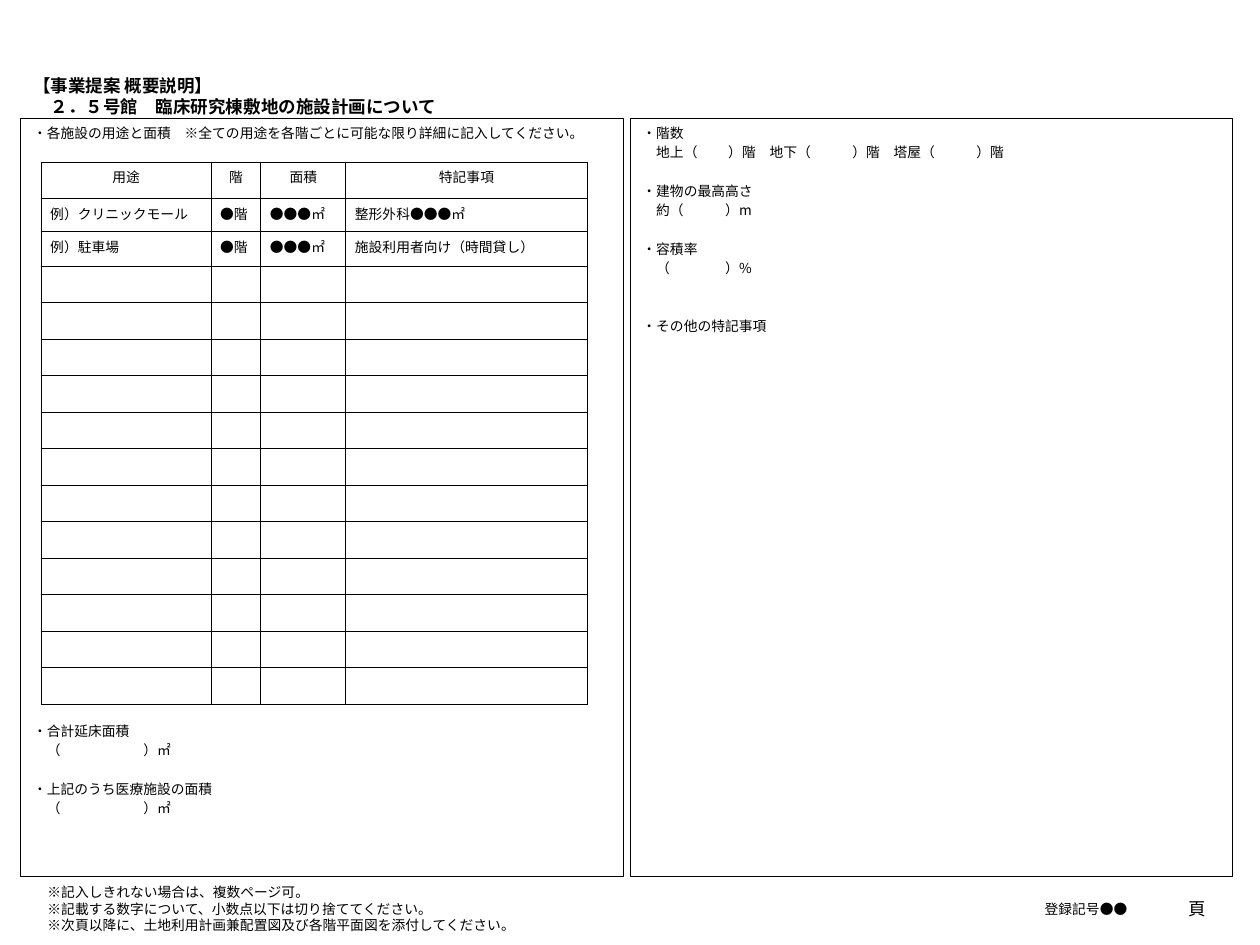
from lxml import etree
from pptx import Presentation
from pptx.dml.color import RGBColor
from pptx.enum import shapes, text
from pptx.oxml import ns
from pptx.util import Pt

COLORS = {"ink": "000000", "paper": "FFFFFF"}
FONT = "Noto Sans CJK JP"
LEFT, CENTER, RIGHT = text.PP_ALIGN.LEFT, text.PP_ALIGN.CENTER, text.PP_ALIGN.RIGHT
TOP, MIDDLE = text.MSO_ANCHOR.TOP, text.MSO_ANCHOR.MIDDLE
LINE, GAP = 13.3, 2.2
BLANK = LINE + GAP

USES = [
    ("用途", "階", "面積", "特記事項"),
    ("例）クリニックモール", "●階", "●●●㎡", "整形外科●●●㎡"),
    ("例）駐車場", "●階", "●●●㎡", "施設利用者向け（時間貸し）"),
] + [("",) * 4] * 12
COLUMNS = [136, 39.8, 68, 193]
ROWS = [29, 26.4, 28] + [29.2] * 12

AREAS = [
    ("・各施設の用途と面積　※全ての用途を各階ごとに可能な限り詳細に記入してください。", 0),
    ("・合計延床面積", GAP + 30 * BLANK - 2),
    ("　（　　　　　　）㎡", GAP),
    ("・上記のうち医療施設の面積", GAP + BLANK),
    ("　（　　　　　　）㎡", GAP),
]
BUILDING = [
    ("・階数", 0),
    ("　地上（　 　）階　地下（　　　）階　塔屋（　　　）階", GAP),
    ("・建物の最高高さ", GAP + BLANK),
    ("　約（　　　）m", GAP),
    ("・容積率", GAP + BLANK),
    ("　（　　　　）%", GAP),
    ("・その他の特記事項", GAP + 2 * BLANK),
]
NOTES = [
    "※記入しきれない場合は、複数ページ可。",
    "※記載する数字について、小数点以下は切り捨ててください。",
    "※次頁以降に、土地利用計画兼配置図及び各階平面図を添付してください。",
]


def write(p, words, size=11, bold=False, align=LEFT, before=0, line=None):
    p.alignment = align
    p.space_before = Pt(before)
    if line:
        p.line_spacing = Pt(line)
    for i, part in enumerate(words.split("\n")):
        if i:
            p.add_line_break()
        r = p.add_run()
        r.text = part
        r.font.name, r.font.size, r.font.bold = FONT, Pt(size), bold
        r.font.color.rgb = RGBColor.from_string(COLORS["ink"])
        ea = etree.SubElement(r.font._element, ns.qn("a:ea"))
        ea.set("typeface", FONT)


def frame(s, anchor=TOP):
    tf = s.text_frame
    tf.word_wrap = True
    tf.auto_size = text.MSO_AUTO_SIZE.NONE
    tf.vertical_anchor = anchor
    tf.margin_left = tf.margin_right = Pt(10)
    tf.margin_top = tf.margin_bottom = Pt(5)
    return tf


def paragraphs(tf, lines, **fmt):
    for i, (words, before) in enumerate(lines):
        p = tf.add_paragraph() if i else tf.paragraphs[0]
        write(p, words, before=before, **fmt)


def heading(slide, x, y, w, h):
    s = slide.shapes.title
    s.left, s.top, s.width, s.height = Pt(x), Pt(y), Pt(w), Pt(h)
    words = "【事業提案 概要説明】\n　２．５号館　臨床研究棟敷地の施設計画について"
    write(frame(s).paragraphs[0], words, size=14, bold=True, line=17)


def panel(slide, x, y, w, h, lines):
    s = slide.shapes.add_shape(shapes.MSO_SHAPE.RECTANGLE, Pt(x), Pt(y), Pt(w), Pt(h))
    s.shadow.inherit = False
    s.fill.background()
    s.line.color.rgb = RGBColor.from_string(COLORS["ink"])
    s.line.width = Pt(0.75)
    paragraphs(frame(s), lines, line=LINE)


def outline(cell):
    pr = cell._tc.get_or_add_tcPr()
    for i, side in enumerate(("lnL", "lnR", "lnT", "lnB")):
        ln = etree.Element(ns.qn("a:" + side), w=str(Pt(1)))
        fill = etree.SubElement(ln, ns.qn("a:solidFill"))
        etree.SubElement(fill, ns.qn("a:srgbClr"), val=COLORS["ink"])
        pr.insert(i, ln)


def use_table(slide, x, y):
    size = Pt(sum(COLUMNS)), Pt(sum(ROWS))
    t = slide.shapes.add_table(len(ROWS), len(COLUMNS), Pt(x), Pt(y), *size).table
    t.first_row = t.horz_banding = False
    for column, width in zip(t.columns, COLUMNS):
        column.width = Pt(width)
    for i, (row, height, words) in enumerate(zip(t.rows, ROWS, USES)):
        row.height = Pt(height)
        for cell, word in zip(row.cells, words):
            cell.margin_bottom = Pt(0)
            cell.fill.solid()
            cell.fill.fore_color.rgb = RGBColor.from_string(COLORS["paper"])
            outline(cell)
            write(cell.text_frame.paragraphs[0], word, align=LEFT if i else CENTER)


def label(slide, x, y, w, h, lines, **fmt):
    s = slide.shapes.add_textbox(Pt(x), Pt(y), Pt(w), Pt(h))
    paragraphs(frame(s, MIDDLE), [(words, 0) for words in lines], **fmt)


def footer(slide, x, y, w, h):
    label(slide, x, y, 499, h, NOTES, line=LINE)
    label(slide, x + w - 382, y, 319, h, ["登録記号●●"], align=RIGHT)
    label(slide, x + w - 57, y, 57, h, ["頁"], size=14, align=RIGHT)


def main():
    prs = Presentation()
    prs.slide_width, prs.slide_height = Pt(1008), Pt(756)
    slide = prs.slides.add_slide(prs.slide_layouts[5])
    heading(slide, 16.5, 54.7, 964, 57)
    panel(slide, 16.5, 94.5, 482, 607, AREAS)
    panel(slide, 504, 94.5, 482, 607, BUILDING)
    use_table(slide, 33, 129.8)
    footer(slide, 28, 707, 947, 40)
    prs.save("out.pptx")


if __name__ == "__main__":
    main()
